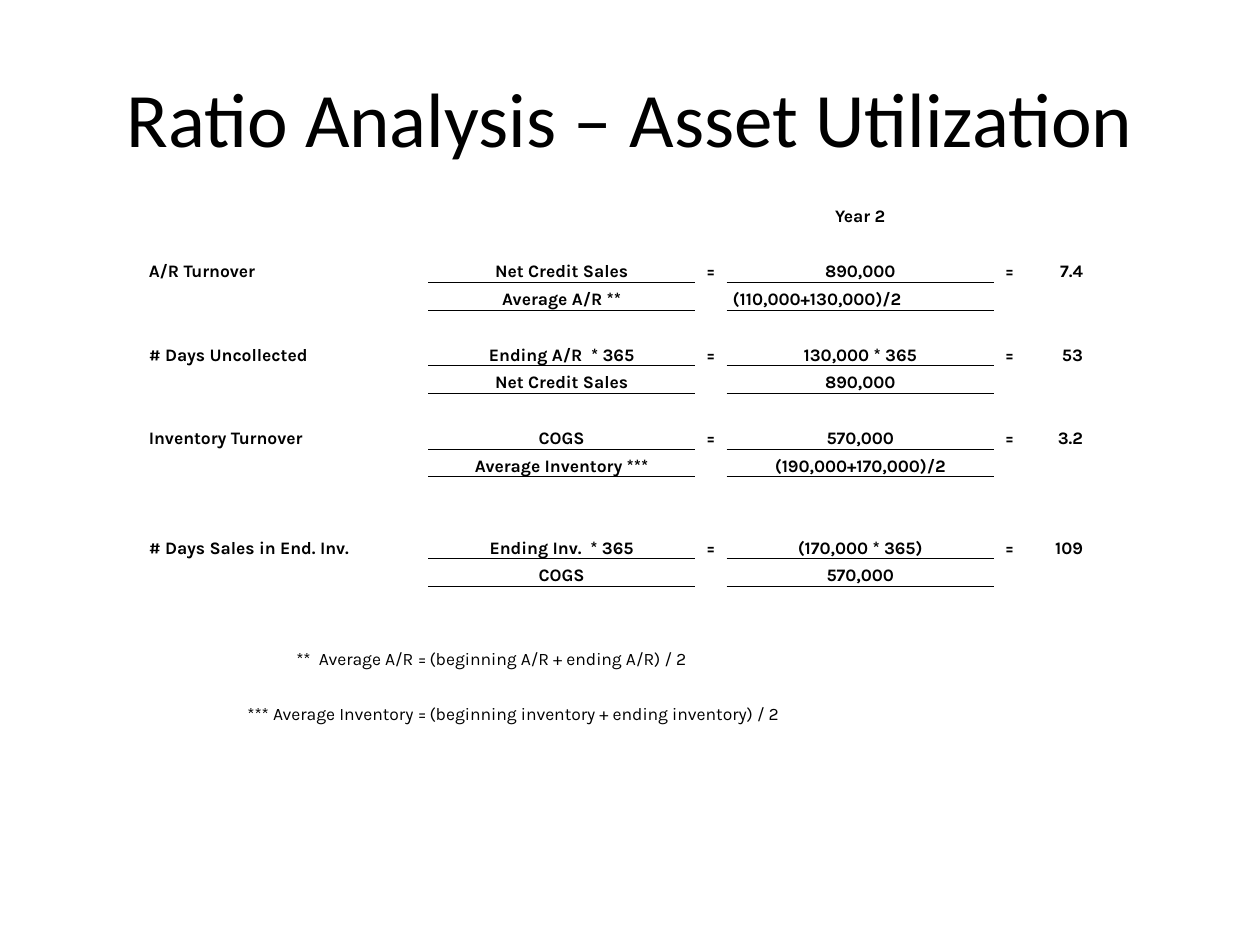
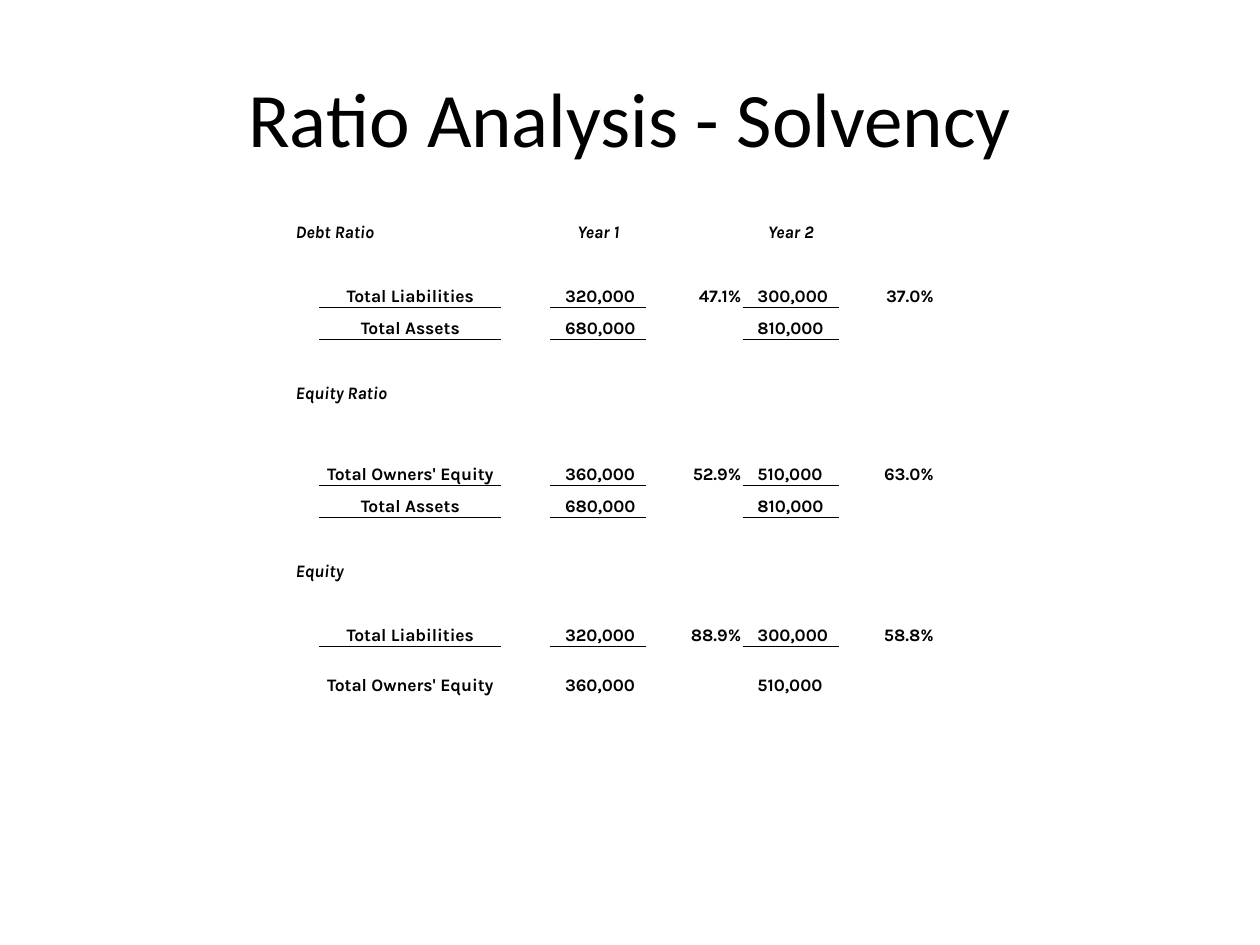
from dataclasses import dataclass

from lxml.etree import SubElement
from pptx import Presentation
from pptx.dml.color import RGBColor
from pptx.enum.text import MSO_ANCHOR as Anchor, PP_ALIGN as Align
from pptx.oxml.ns import qn
from pptx.util import Cm, Pt

BLACK = RGBColor(0x00, 0x00, 0x00)
TITLE_FONT, TABLE_FONT = "Calibri", "Karla"
TITLE_SIZE, TABLE_SIZE = Pt(44), Pt(10)
RULE_WIDTH = Pt(0.5)
CELL_MARGIN = 0.03
NO_STYLE = "{2D5ABB26-0587-4C30-8999-92F81FD0307C}"


@dataclass
class Grid:
    """Position and track sizes of a table, in centimetres."""
    left: float
    top: float
    columns: list[float]
    rows: list[float]


@dataclass
class Entry:
    """Text of one cell, with its look."""
    row: int
    column: int
    text: str
    align: Align = Align.CENTER
    bold: bool = True
    italic: bool = False
    indent: float = CELL_MARGIN
    rule: str = ""
    span: int = 1


@dataclass
class Turnover:
    """One ratio of the asset slide: terms and figures as (top, bottom)."""
    row: int
    name: str
    terms: tuple[str, str]
    figures: tuple[str, str]
    result: str


@dataclass
class Solvency:
    """One ratio of the solvency slide, with two years of figures."""
    heading_row: int
    name: str
    terms: tuple[str, str]
    years: list[tuple[str, str, str]]


def style_paragraph(para, font_name: str, size: Pt, align: Align) -> None:
    para.alignment = align
    para.font.name = font_name
    para.font.size = size
    para.font.color.rgb = BLACK


def add_title(page, text: str) -> None:
    box = page.shapes.add_textbox(Cm(1.27), Cm(0.76), Cm(22.86), Cm(3.18))
    frame = box.text_frame
    frame.word_wrap = True
    frame.vertical_anchor = Anchor.MIDDLE
    frame.text = text
    style_paragraph(frame.paragraphs[0], TITLE_FONT, TITLE_SIZE, Align.CENTER)


def add_rule(cell, edge: str) -> None:
    line = SubElement(cell._tc.get_or_add_tcPr(), qn(f"a:{edge}"), w=str(RULE_WIDTH))
    fill = SubElement(line, qn("a:solidFill"))
    SubElement(fill, qn("a:srgbClr"), val=str(BLACK))


def fill_cell(table, entry: Entry) -> None:
    cell = table.cell(entry.row, entry.column)
    if entry.span > 1:
        cell.merge(table.cell(entry.row, entry.column + entry.span - 1))
    cell.text = entry.text
    para = cell.text_frame.paragraphs[0]
    style_paragraph(para, TABLE_FONT, TABLE_SIZE, entry.align)
    para.font.bold = entry.bold
    para.font.italic = entry.italic
    if entry.align == Align.RIGHT:
        cell.margin_right = Cm(entry.indent)
    else:
        cell.margin_left = Cm(entry.indent)
    if entry.rule:
        add_rule(cell, entry.rule)


def add_grid(page, grid: Grid, entries: list[Entry]) -> None:
    frame = page.shapes.add_table(
        len(grid.rows), len(grid.columns), Cm(grid.left), Cm(grid.top),
        Cm(sum(grid.columns)), Cm(sum(grid.rows)))
    table = frame.table
    table.first_row = table.horz_banding = False
    table._tbl.tblPr.find(qn("a:tableStyleId")).text = NO_STYLE
    for column, width in zip(table.columns, grid.columns):
        column.width = Cm(width)
    for row, height in zip(table.rows, grid.rows):
        row.height = Cm(height)
    for cell in table.iter_cells():
        cell.vertical_anchor = Anchor.BOTTOM
        cell.margin_left = cell.margin_right = cell.margin_top = Cm(CELL_MARGIN)
        cell.margin_bottom = 0
    for entry in entries:
        fill_cell(table, entry)
    # Clear fills, and keep empty cells from stretching their rows
    for cell in table.iter_cells():
        cell.fill.background()
        if not cell.text:
            para = cell.text_frame.paragraphs[0]
            SubElement(para._p, qn("a:endParaRPr"), sz=str(int(TABLE_SIZE.pt * 100)))


def fraction(row: int, column: int, parts: tuple[str, str],
             align: Align = Align.CENTER, indent: float = CELL_MARGIN) -> list[Entry]:
    """Numerator over denominator, with a line between them."""
    return [Entry(row + step, column, text, align, indent=indent, rule=edge)
            for step, (text, edge) in enumerate(zip(parts, ("lnB", "lnT")))]


# Asset utilization
ASSET_GRID = Grid(2.97, 4.01, [5.66, 5.38, 0.64, 5.38, 0.64, 1.55],
                  [0.56] * 11 + [1.09] + [0.56] * 6)
TURNOVERS = [
    Turnover(2, "A/R Turnover", ("Net Credit Sales", "Average A/R **"),
             ("890,000", "(110,000+130,000)/2"), "7.4"),
    Turnover(5, "# Days Uncollected", ("Ending A/R  * 365", "Net Credit Sales"),
             ("130,000 * 365", "890,000"), "53"),
    Turnover(8, "Inventory Turnover", ("COGS", "Average Inventory ***"),
             ("570,000", "(190,000+170,000)/2"), "3.2"),
    Turnover(11, "# Days Sales in End. Inv.", ("Ending Inv.  * 365", "COGS"),
             ("(170,000 * 365)", "570,000"), "109"),
]
FOOTNOTES = [
    (15, "**  Average A/R =", "(beginning A/R + ending A/R) / 2"),
    (17, "*** Average Inventory =", "(beginning inventory + ending inventory) / 2"),
]


def asset_entries() -> list[Entry]:
    entries = [Entry(0, 3, "Year 2")]
    for ratio in TURNOVERS:
        entries.append(Entry(ratio.row, 0, ratio.name, Align.LEFT))
        entries += fraction(ratio.row, 1, ratio.terms)
        entries += fraction(ratio.row, 3, ratio.figures)
        entries += [Entry(ratio.row, column, "=") for column in (2, 4)]
        entries.append(Entry(ratio.row, 5, ratio.result, Align.RIGHT, indent=0.39))
    # The first average stands at the left of its cell
    first_average = next(entry for entry in entries if entry.text.startswith("(110"))
    first_average.align, first_average.indent = Align.LEFT, 0.12
    for row, term, meaning in FOOTNOTES:
        entries.append(Entry(row, 0, term, Align.RIGHT, bold=False))
        entries.append(Entry(row, 1, meaning, Align.LEFT, bold=False, span=3))
    return entries


# Solvency
SOLVENCY_GRID = Grid(5.93, 4.24, [0.51, 3.66, 0.99] + [1.94] * 4,
                     [0.65] * 7 + [0.99] + [0.65] * 5 + [0.99])
LIABILITIES, ASSETS, EQUITY = "Total Liabilities", "Total Assets", "Total Owners' Equity"
SOLVENCIES = [
    Solvency(0, "Debt Ratio", (LIABILITIES, ASSETS),
             [("320,000", "680,000", "47.1%"), ("300,000", "810,000", "37.0%")]),
    Solvency(5, "Equity Ratio", (EQUITY, ASSETS),
             [("360,000", "680,000", "52.9%"), ("510,000", "810,000", "63.0%")]),
    Solvency(10, "Equity", (LIABILITIES, EQUITY),
             [("320,000", "360,000", "88.9%"), ("300,000", "510,000", "58.8%")]),
]
YEAR_COLUMNS = (3, 5)


def solvency_entries() -> list[Entry]:
    entries = [Entry(0, column, f"Year {year}", italic=True)
               for year, column in enumerate(YEAR_COLUMNS, 1)]
    for ratio in SOLVENCIES:
        row = ratio.heading_row + 2
        entries.append(Entry(ratio.heading_row, 0, ratio.name, Align.LEFT,
                             italic=True, span=2))
        entries += fraction(row, 1, ratio.terms)
        for column, (top, bottom, percent) in zip(YEAR_COLUMNS, ratio.years):
            entries += fraction(row, column, (top, bottom), Align.LEFT, 0.3)
            entries.append(Entry(row, column + 1, percent, Align.RIGHT))
    return entries


def main() -> None:
    deck = Presentation()
    deck.slide_width, deck.slide_height = Cm(25.4), Cm(19.05)
    for title, grid, entries in (
        ("Ratio Analysis – Asset Utilization", ASSET_GRID, asset_entries()),
        ("Ratio Analysis - Solvency", SOLVENCY_GRID, solvency_entries()),
    ):
        page = deck.slides.add_slide(deck.slide_layouts[6])
        add_title(page, title)
        add_grid(page, grid, entries)
    deck.save("out.pptx")


if __name__ == "__main__":
    main()
